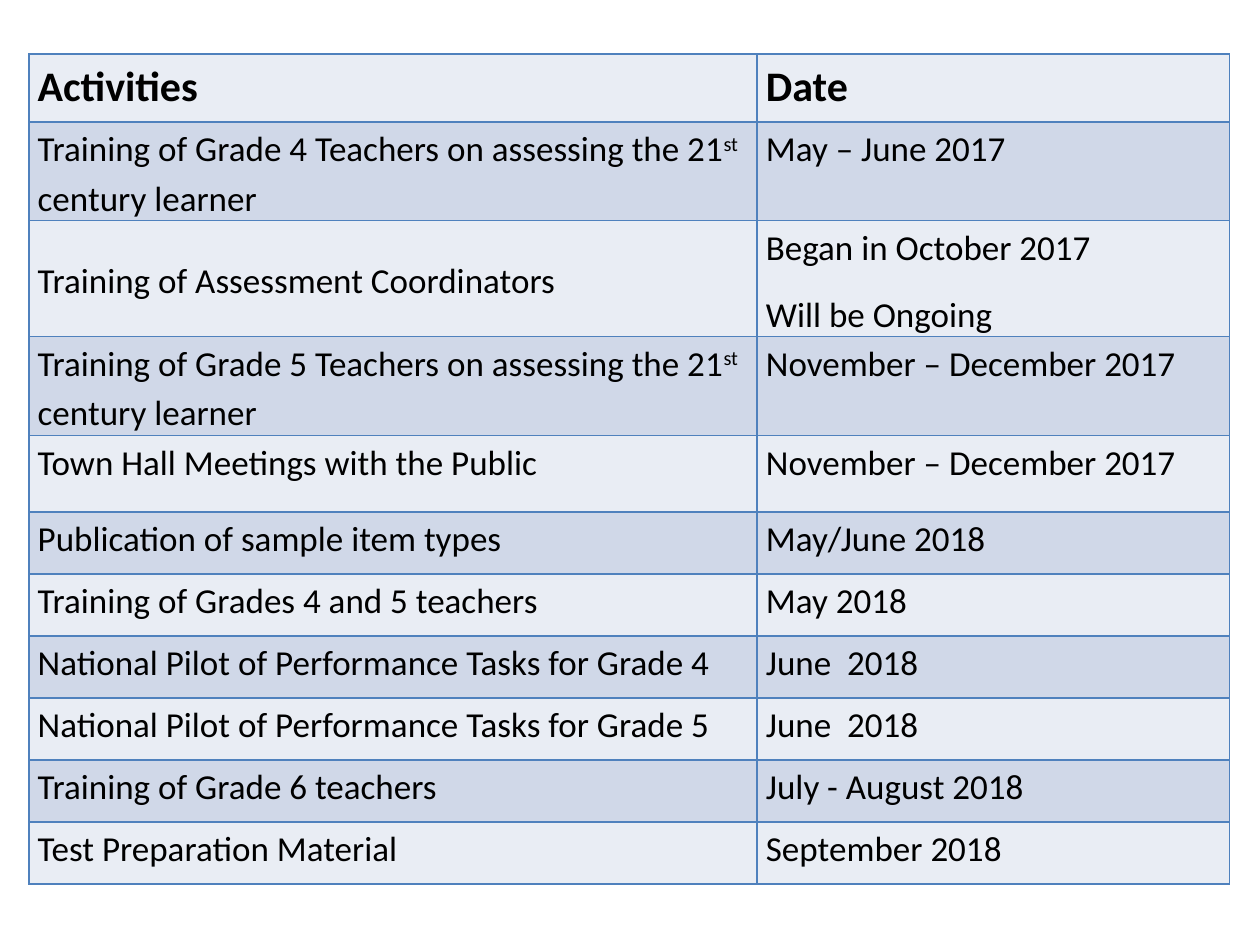
from lxml import etree
from pptx import Presentation
from pptx import util as u
from pptx.dml.color import RGBColor
from pptx.enum import text
from pptx.oxml import ns

BLACK = RGBColor(0x00, 0x00, 0x00)
PALE = RGBColor(0xE9, 0xED, 0xF4)
BLUE_GREY = RGBColor(0xD0, 0xD8, 0xE8)
BORDER = RGBColor(0x4F, 0x81, 0xBD)

FONT = "Calibri"
COLUMN_WIDTHS = [14.68, 9.53]
ROW_HEIGHTS = [1.37, 1.98, 1.07, 1.98, 1.55] + [1.25] * 6

# A caret pair encloses superscript; a line break starts a new paragraph
SCHEDULE = [
    ("Activities", "Date"),
    ("Training of Grade 4 Teachers on assessing the 21^st^ century learner", "May – June 2017"),
    ("Training of Assessment Coordinators", "Began in October 2017\nWill be Ongoing"),
    ("Training of Grade 5 Teachers on assessing the 21^st^ century learner",
     "November – December 2017"),
    ("Town Hall Meetings with the Public", "November – December 2017"),
    ("Publication of sample item types", "May/June 2018"),
    ("Training of Grades 4 and 5 teachers", "May 2018"),
    ("National Pilot of Performance Tasks for Grade 4", "June  2018"),
    ("National Pilot of Performance Tasks for Grade 5", "June  2018"),
    ("Training of Grade 6 teachers", "July - August 2018"),
    ("Test Preparation Material", "September 2018"),
]
COORDINATORS_ROW = 2


def add_borders(cell):
    properties = cell._tc.get_or_add_tcPr()
    for side in ("lnL", "lnR", "lnT", "lnB"):
        line = etree.SubElement(properties, ns.qn(f"a:{side}"), w=str(u.Pt(1)))
        fill = etree.SubElement(line, ns.qn("a:solidFill"))
        etree.SubElement(fill, ns.qn("a:srgbClr"), val=str(BORDER))


def write_paragraph(paragraph, wording, is_header):
    paragraph.line_spacing = 1.15
    if is_header:
        paragraph.space_before = u.Pt(10)
    else:
        paragraph.space_after = u.Pt(10)
    for index, part in enumerate(wording.split("^")):
        span = paragraph.add_run()
        span.text = part
        span.font.name = FONT
        span.font.size = u.Pt(24 if is_header else 20)
        span.font.bold = is_header
        span.font.color.rgb = BLACK
        if index % 2:
            span._r.get_or_add_rPr().set("baseline", "30000")


def fill_cell(cell, wording, row):
    add_borders(cell)
    cell.fill.solid()
    cell.fill.fore_color.rgb = BLUE_GREY if row % 2 else PALE
    cell.margin_left = cell.margin_right = u.Cm(0.18)
    cell.margin_top = cell.margin_bottom = 0
    frame = cell.text_frame
    for index, line in enumerate(wording.split("\n")):
        paragraph = frame.add_paragraph() if index else frame.paragraphs[0]
        write_paragraph(paragraph, line, row == 0)


def add_schedule(page):
    table = page.shapes.add_table(
        len(SCHEDULE), len(COLUMN_WIDTHS), u.Cm(0.58), u.Cm(1.09),
        u.Cm(sum(COLUMN_WIDTHS)), u.Cm(sum(ROW_HEIGHTS))).table
    table.first_row = table.horz_banding = False
    for column, width in zip(table.columns, COLUMN_WIDTHS):
        column.width = u.Cm(width)
    for row, (entries, height) in enumerate(zip(SCHEDULE, ROW_HEIGHTS)):
        table.rows[row].height = u.Cm(height)
        for column, wording in enumerate(entries):
            fill_cell(table.cell(row, column), wording, row)
    table.cell(COORDINATORS_ROW, 0).vertical_anchor = text.MSO_ANCHOR.MIDDLE


def main():
    deck = Presentation()
    deck.slide_width, deck.slide_height = u.Cm(25.4), u.Cm(19.05)
    page = deck.slides.add_slide(deck.slide_layouts[6])

    # Activity schedule
    add_schedule(page)
    deck.save("out.pptx")


if __name__ == "__main__":
    main()
